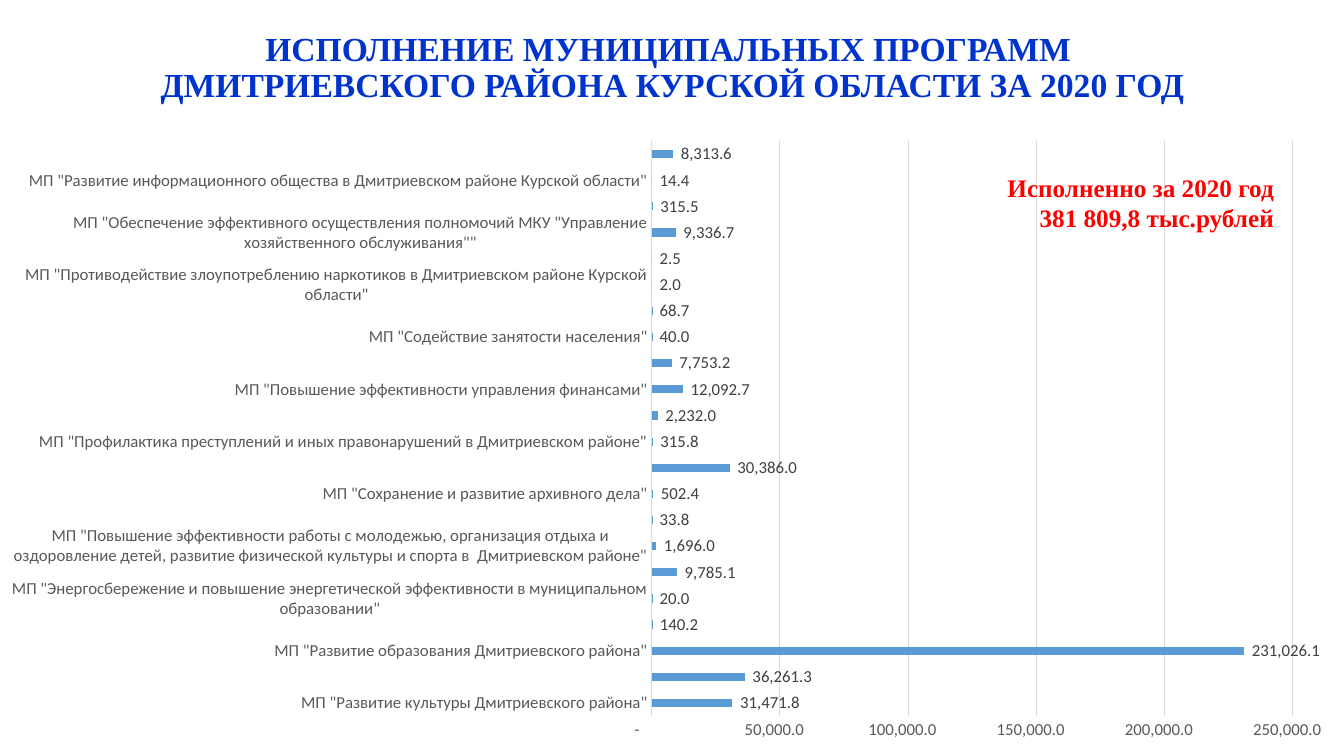
from pptx import Presentation
from pptx.chart.data import CategoryChartData as ChartData
from pptx.dml.color import RGBColor
from pptx.enum.chart import XL_CHART_TYPE as Kind, XL_LABEL_POSITION as Spot
from pptx.enum.chart import XL_TICK_MARK as Tick
from pptx.enum.text import MSO_ANCHOR as Anchor, PP_ALIGN as Align
from pptx.oxml import parse_xml
from pptx.oxml.ns import nsdecls, qn
from pptx.util import Pt

TITLE = "ИСПОЛНЕНИЕ МУНИЦИПАЛЬНЫХ ПРОГРАММ \vДМИТРИЕВСКОГО РАЙОНА КУРСКОЙ ОБЛАСТИ ЗА 2020 ГОД"
TOTAL = "Исполненно за 2020 год\v381 809,8 тыс.рублей"
PLANS = [
    ('МП "Развитие культуры Дмитриевского района"', 31471.8, 36261.3),
    ('МП "Развитие образования Дмитриевского района"', 231026.1, 140.2),
    ('МП "Энергосбережение и повышение энергетической эффективности в муниципальном образовании"', 20, 9785.1),
    ('МП "Повышение эффективности работы с молодежью, организация отдыха и оздоровление детей, '
     'развитие физической культуры и спорта в  Дмитриевском районе"', 1696, 33.8),
    ('МП "Сохранение и развитие архивного дела"', 502.4, 30386),
    ('МП "Профилактика преступлений и иных правонарушений в Дмитриевском районе"', 315.8, 2232),
    ('МП "Повышение эффективности управления финансами"', 12092.7, 7753.2),
    ('МП "Содействие занятости населения"', 40, 68.7),
    ('МП "Противодействие злоупотреблению наркотиков в Дмитриевском районе Курской области"', 2, 2.5),
    ('МП "Обеспечение эффективного осуществления полномочий МКУ "Управление хозяйственного обслуживания""',
     9336.7, 315.5),
    ('МП "Развитие информационного общества в Дмитриевском районе Курской области"', 14.4, 8313.6),
]
FORMAT = r'_-* #,##0.0_р_._-;\-* #,##0.0_р_._-;_-* "-"??_р_._-;_-@_-'
PLOT = {"x": 0.485, "y": 0.027, "w": 0.477, "h": 0.91}

BLUE = RGBColor(0x00, 0x33, 0xCC)
RED = RGBColor(0xFF, 0x00, 0x00)
BAR = RGBColor(0x5B, 0x9B, 0xD5)
GRID = RGBColor(0xD9, 0xD9, 0xD9)
GREY = RGBColor(0x59, 0x59, 0x59)
DARK = RGBColor(0x40, 0x40, 0x40)


def px(num):
    """Turn px into EMU."""
    return round(num * 914400 / 100.8)


def place(shape, *box):
    """Set left, top, width and height in px."""
    shape.left, shape.top, shape.width, shape.height = map(px, box)


def style(font, size, color, name="Calibri", bold=False):
    """Format a font."""
    font.size, font.name, font.bold = Pt(size), name, bold
    font.color.rgb = color


def write(shape, text, size, color, align, anchor, space=1.0):
    """Put bold serif text into a shape."""
    frame = shape.text_frame
    frame.word_wrap = True
    frame.vertical_anchor = anchor
    para = frame.paragraphs[0]
    para.text = text
    para.alignment, para.line_spacing = align, space
    for run in para.runs:
        style(run.font, size, color, "Times New Roman", True)
    return frame


def rule(line):
    """Draw a thin grey chart line."""
    line.color.rgb, line.width = GRID, Pt(0.75)


def draw(slide):
    """Add the bar chart, with a name at every second bar."""
    data = ChartData()
    data.categories = [text for name, *_ in PLANS for text in (name, "")]
    data.add_series("Series 1", [val for _, *pair in PLANS for val in pair])
    box = map(px, (0, 124, 1344, 632))
    chart = slide.shapes.add_chart(Kind.BAR_CLUSTERED, *box, data).chart
    chart.has_legend = chart.has_title = False
    style(chart.font, 10, RGBColor(0, 0, 0))

    names, vals = chart.category_axis, chart.value_axis
    for axis in (names, vals):
        axis.major_tick_mark = axis.minor_tick_mark = Tick.NONE
        style(axis.tick_labels.font, 12, GREY)
    rule(names.format.line)
    vals.format.line.fill.background()
    rule(vals.major_gridlines.format.line)
    vals.minimum_scale, vals.maximum_scale, vals.major_unit = 0, 250000, 50000

    plot = chart.plots[0]
    plot.gap_width, plot.vary_by_categories = 219, False
    fill = plot.series[0].format.fill
    fill.solid()
    fill.fore_color.rgb = BAR
    plot.has_data_labels = True
    tags = plot.data_labels
    tags.show_value, tags.position = True, Spot.OUTSIDE_END
    style(tags.font, 12, DARK)
    for part in (tags, vals.tick_labels):
        part.number_format, part.number_format_is_linked = FORMAT, False

    area = chart._chartSpace.chart.plotArea
    for old in area.findall(qn("c:layout")):
        area.remove(old)
    modes = '<c:layoutTarget val="inner"/><c:xMode val="edge"/><c:yMode val="edge"/>'
    sizes = "".join(f'<c:{key} val="{val}"/>' for key, val in PLOT.items())
    area.insert(0, parse_xml(
        f'<c:layout {nsdecls("c")}><c:manualLayout>{modes}{sizes}</c:manualLayout></c:layout>'))


def main():
    """Build the slide."""
    deck = Presentation()
    deck.slide_width, deck.slide_height = px(1344), px(756)
    slide = deck.slides.add_slide(deck.slide_layouts[5])
    title = slide.shapes.title
    place(title, 93, 0, 1159, 137)
    write(title, TITLE, 24, BLUE, Align.CENTER, Anchor.MIDDLE, 0.9)
    draw(slide)
    note = slide.shapes.add_textbox(0, 0, 0, 0)
    place(note, 996, 167, 302, 102)
    frame = write(note, TOTAL, 18, RED, Align.RIGHT, Anchor.TOP)
    frame.margin_left, frame.margin_right = 0, px(24)
    deck.save("out.pptx")


if __name__ == "__main__":
    main()
